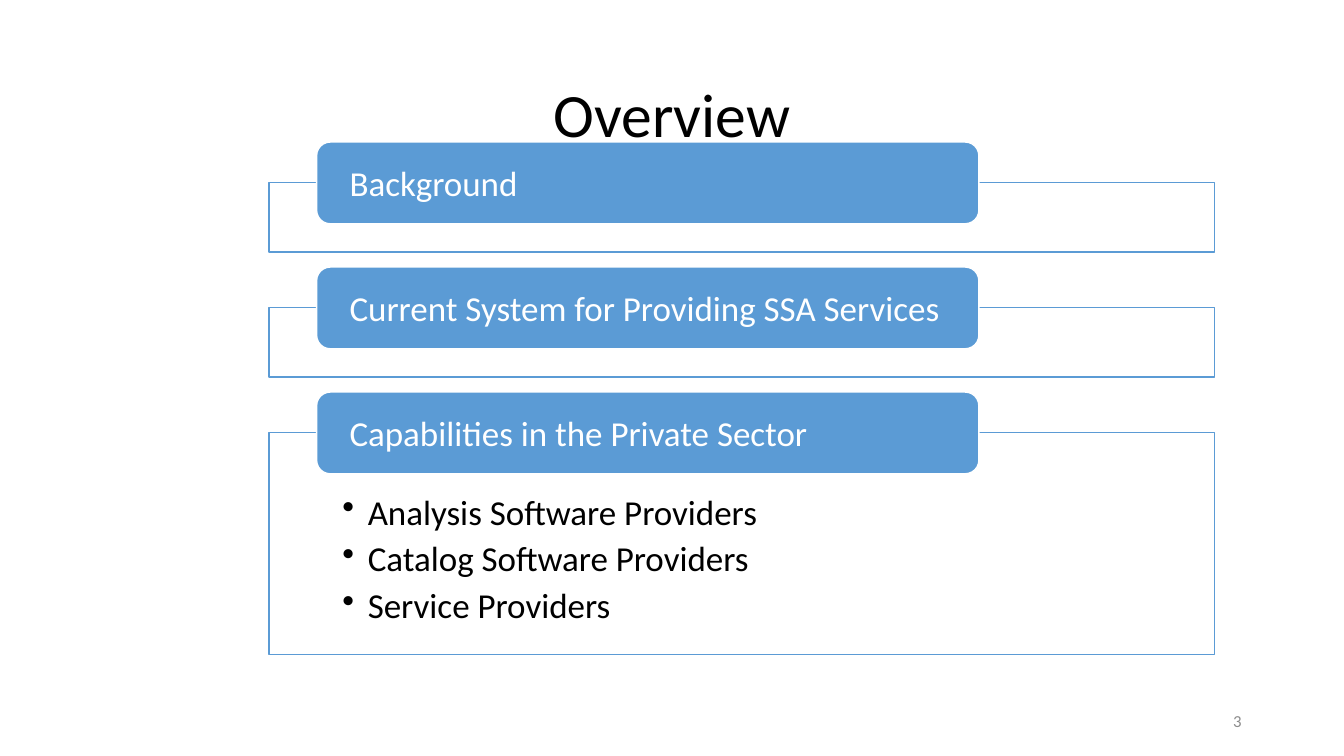
"""Build the overview slide: three topic tabs over framed boxes."""
from lxml import etree
from pptx import Presentation
from pptx.dml.color import RGBColor
from pptx.enum.shapes import MSO_SHAPE
from pptx.enum.text import MSO_ANCHOR, PP_ALIGN
from pptx.oxml.ns import qn
from pptx.util import Cm, Pt

RECT, ROUND = MSO_SHAPE.RECTANGLE, MSO_SHAPE.ROUNDED_RECTANGLE
TOP, MIDDLE = MSO_ANCHOR.TOP, MSO_ANCHOR.MIDDLE
LEFT, CENTER, RIGHT = PP_ALIGN.LEFT, PP_ALIGN.CENTER, PP_ALIGN.RIGHT

TITLE = "Overview"
PAGE = "3"
TOPICS = [
    ("Background", []),
    ("Current System for Providing SSA Services", []),
    ("Capabilities in the Private Sector", [
        "Analysis Software Providers",
        "Catalog Software Providers",
        "Service Providers",
    ]),
]

THEME = {
    "font": "Calibri",
    "blue": RGBColor(0x5B, 0x9B, 0xD5),
    "white": RGBColor(0xFF, 0xFF, 0xFF),
    "black": RGBColor(0, 0, 0),
    "gray": RGBColor(0x8C, 0x8C, 0x8C),
    "title": Pt(44),
    "body": Pt(25),
    "page": Pt(12),
}

FRAME = {"left": 6.78, "width": 23.83, "top": 4.6, "gap": 1.4}
SHORT, TALL = 1.75, 5.59
TAB = {"left": 7.98, "width": 16.69, "height": 2.06, "rise": 1.02}
TAB_PAD = (0.73, 0, 0.73, 0)
LIST_PAD = (1.85, 1.45, 1.85, 0.48)
PAGE_PAD = (0.25, 0.13, 0.25, 0.13)


def apply(item, values):
    """Set each named attribute of the item."""
    for name, value in values.items():
        setattr(item, name, value)


def place(item, left, top, width, height):
    """Move and size an item, given centimetres."""
    names = ("left", "top", "width", "height")
    apply(item, dict(zip(names, map(Cm, (left, top, width, height)))))


def write(item, lines, size, color, align=LEFT, anchor=MIDDLE, pad=PAGE_PAD):
    """Fill an item with formatted lines and return its paragraphs."""
    frame = item.text_frame
    names = ("margin_left", "margin_top", "margin_right", "margin_bottom")
    apply(frame, dict(zip(names, map(Cm, pad))))
    apply(frame, {"text": "\n".join(lines), "word_wrap": True,
                  "vertical_anchor": anchor})
    for para in frame.paragraphs:
        para.alignment = align
        for run in para.runs:
            apply(run.font, {"name": THEME["font"], "size": THEME[size]})
            run.font.color.rgb = THEME[color]
    return frame.paragraphs


def bullet(para):
    """Give a paragraph a hanging round bullet."""
    para.space_after = Pt(3.5)
    props = para._p.get_or_add_pPr()
    props.set("marL", str(Cm(0.64)))
    props.set("indent", str(-Cm(0.64)))
    etree.SubElement(props, qn("a:buChar")).set("char", "•")


def panel(slide, kind, box, fill, line):
    """Add a flat filled shape with a thin outline."""
    shape = slide.shapes.add_shape(kind, *map(Cm, box))
    shape.shadow.inherit = False
    shape.fill.solid()
    shape.fill.fore_color.rgb = THEME[fill]
    shape.line.color.rgb = THEME[line]
    shape.line.width = Pt(1)
    return shape


def topic(slide, top, height, name, points):
    """Add one framed box with its tab and points."""
    box = (FRAME["left"], top, FRAME["width"], height)
    frame = panel(slide, RECT, box, "white", "blue")
    tint = frame.fill._xPr.find(".//" + qn("a:srgbClr"))
    etree.SubElement(tint, qn("a:alpha")).set("val", "90000")
    if points:
        for para in write(frame, points, "body", "black",
                          anchor=TOP, pad=LIST_PAD):
            bullet(para)
    box = (TAB["left"], top - TAB["rise"], TAB["width"], TAB["height"])
    tab = panel(slide, ROUND, box, "blue", "white")
    write(tab, [name], "body", "white", pad=TAB_PAD)


def main():
    """Lay out the slide and save it."""
    deck = Presentation()
    apply(deck, {"slide_width": Cm(33.87), "slide_height": Cm(19.05)})
    slide = deck.slides.add_slide(deck.slide_layouts[5])
    title = slide.shapes.title
    place(title, 2.33, 1.01, 29.21, 3.68)
    write(title, [TITLE], "title", "black", CENTER)
    top = FRAME["top"]
    for name, points in TOPICS:
        height = TALL if points else SHORT
        topic(slide, top, height, name, points)
        top += height + FRAME["gap"]
    page = slide.shapes.add_textbox(*map(Cm, (23.92, 17.66, 7.62, 1.01)))
    write(page, [PAGE], "page", "gray", RIGHT)
    deck.save("out.pptx")


if __name__ == "__main__":
    main()
